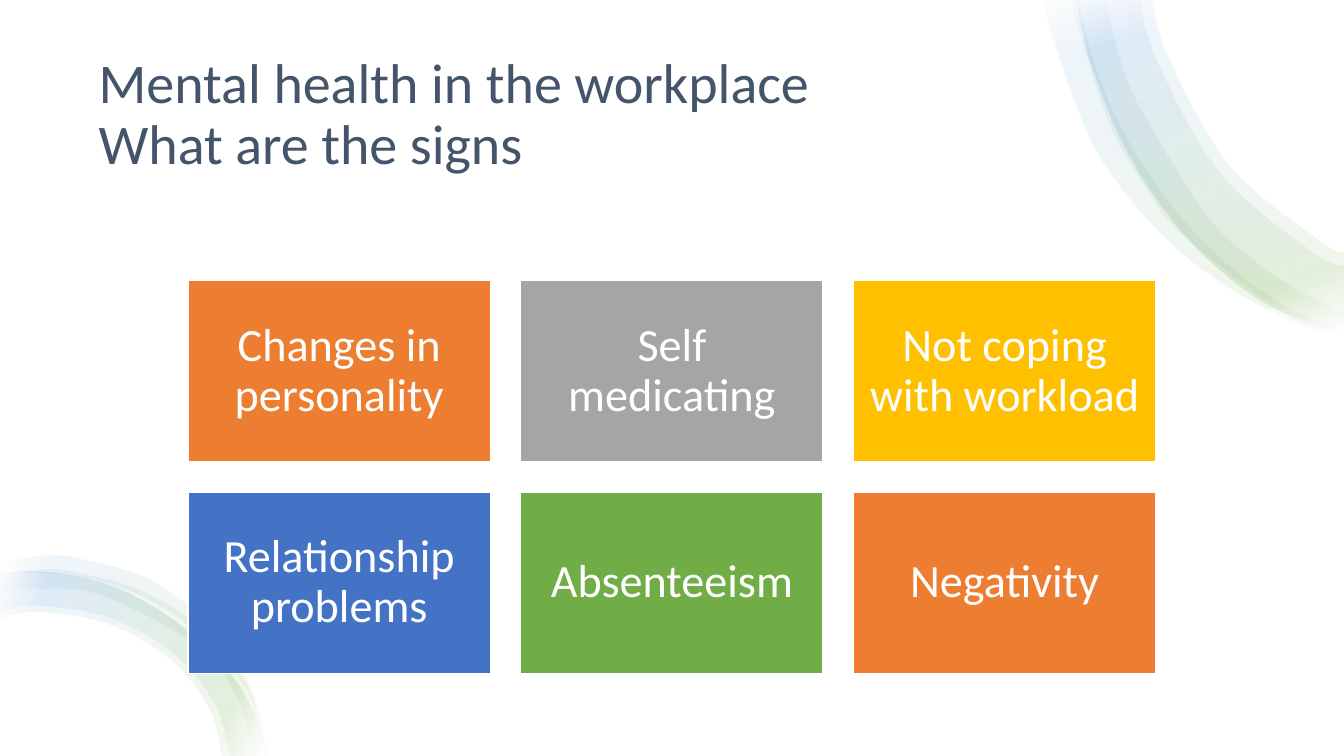
from dataclasses import dataclass

from lxml import etree
from pptx import Presentation
from pptx.dml.color import RGBColor
from pptx.enum.shapes import MSO_SHAPE
from pptx.enum.text import MSO_ANCHOR, PP_ALIGN
from pptx.oxml.ns import qn
from pptx.util import Inches, Pt

RECT = MSO_SHAPE.RECTANGLE
MIDDLE = MSO_ANCHOR.MIDDLE
CENTER, LEFT = PP_ALIGN.CENTER, PP_ALIGN.LEFT

W, H = 13.33, 7.5
UNIT = 0.3  # grid step in inches
TILE_COLS, TILE_ROWS, GAP = 10, 6, 1  # in grid steps
PER_ROW = 3


@dataclass(frozen=True)
class Theme:
    font: str = "Calibri"
    title_size: int = 40
    tile_size: int = 33
    title: str = "44546A"
    white: str = "FFFFFF"
    orange: str = "ED7D31"
    gray: str = "A5A5A5"
    gold: str = "FFC000"
    blue: str = "4472C4"
    green: str = "70AD47"
    sky: str = "5B9BD5"
    band_opacity: int = 10


THEME = Theme()

TILES = [
    ("Changes in personality", THEME.orange),
    ("Self medicating", THEME.gray),
    ("Not coping with workload", THEME.gold),
    ("Relationship problems", THEME.blue),
    ("Absenteeism", THEME.green),
    ("Negativity", THEME.orange),
]

# Edges of the curved bands, in inches
TOP_OUTER = [(10.67, -0.09), (10.82, 0.62), (11.2, 1.54), (11.79, 2.38),
             (12.48, 2.97), (13.09, 3.24), (13.33, 3.32)]
TOP_BANDS = [
    ([(10.36, -0.09), (10.41, 0.26), (10.78, 1.31), (11.16, 1.92),
      (11.65, 2.45), (12.21, 2.87), (12.82, 3.19), (13.33, 3.35)],
     [(10.68, -0.09), (10.82, 0.52), (11.06, 1.15), (11.4, 1.73),
      (11.81, 2.27), (12.3, 2.73), (12.86, 3.1), (13.33, 3.28)]),
    (TOP_OUTER,
     [(11.41, -0.09), (11.58, 0.55), (12.19, 1.64), (13.07, 2.38), (13.33, 2.51)]),
    ([(10.63, -0.09), (10.68, 0.2), (10.99, 1.19), (11.32, 1.79),
      (11.73, 2.33), (12.79, 3.14), (13.33, 3.33)],
     [(10.96, -0.09), (11.07, 0.44), (11.29, 1.04), (11.95, 2.11),
      (12.39, 2.55), (12.9, 2.9), (13.33, 3.08)]),
    (TOP_OUTER,
     [(11.29, -0.09), (11.47, 0.59), (12.1, 1.72), (13.01, 2.5), (13.33, 2.64)]),
]
BOTTOM_OUTER = [(0, 5.72), (0.4, 5.67), (1.13, 5.82), (1.84, 6.24),
                (2.36, 6.79), (2.62, 7.35), (2.63, 7.5)]
BOTTOM_BANDS = [
    (BOTTOM_OUTER,
     [(0, 6.13), (0.4, 6.07), (1.07, 6.19), (1.66, 6.52), (2.06, 7), (2.2, 7.5)]),
    (BOTTOM_OUTER,
     [(0, 6.06), (0.4, 6.01), (1.09, 6.13), (1.7, 6.47), (2.12, 6.97), (2.28, 7.5)]),
    ([(0, 5.71), (0.31, 5.66), (0.69, 5.67), (1.42, 5.87), (2.03, 6.27),
      (2.47, 6.85), (2.63, 7.5)],
     [(0, 5.88), (0.33, 5.84), (1.01, 5.91), (1.92, 6.39), (2.34, 6.91), (2.51, 7.5)]),
    ([(0, 5.59), (0.31, 5.53), (0.71, 5.53), (1.48, 5.75), (2.1, 6.23),
      (2.5, 6.87), (2.64, 7.5)],
     [(0, 5.72), (0.32, 5.68), (1.05, 5.78), (1.71, 6.09), (2.25, 6.58),
      (2.51, 7.01), (2.62, 7.5)]),
]


def rgb(color):
    return RGBColor.from_string(color)


def bend_edges(shape, corner):
    """Turn the lines of both edges into curves; the line to corner stays."""
    outline = shape.element.spPr.find(".//" + qn("a:pathLst"))[0]
    pts = [(int(pt.get("x")), int(pt.get("y"))) for pt in outline.iter(qn("a:pt"))]
    lines = outline.findall(qn("a:lnTo"))
    for first, last in ((0, corner - 1), (corner, len(pts) - 1)):
        for i in range(first, last):
            before, a = pts[max(i - 1, first)], pts[i]
            b, after = pts[i + 1], pts[min(i + 2, last)]
            leave = [q + (r - p) / 6 for p, q, r in zip(before, a, b)]
            arrive = [q - (r - p) / 6 for p, q, r in zip(a, b, after)]
            curve = etree.Element(qn("a:cubicBezTo"))
            for x, y in (leave, arrive, b):
                etree.SubElement(curve, qn("a:pt"), x=str(round(x)), y=str(round(y)))
            outline.replace(lines[i], curve)


def fill_gradient(shape, angle):
    """See-through white, green, blue, white; angle is counter-clockwise."""
    shape.fill.gradient()
    shape.fill.gradient_angle = angle
    stops = shape.element.spPr.find(".//" + qn("a:gsLst"))
    for stop in list(stops):
        stops.remove(stop)
    for share, color in ((2, THEME.white), (16, THEME.green),
                         (85, THEME.sky), (100, THEME.white)):
        stop = etree.SubElement(stops, qn("a:gs"), pos=str(share * 1000))
        clr = etree.SubElement(stop, qn("a:srgbClr"), val=color)
        etree.SubElement(clr, qn("a:alpha"), val=str(THEME.band_opacity * 1000))


def add_band(s, outer, inner, angle):
    start, *rest = [(Inches(x), Inches(y)) for x, y in outer + inner[::-1]]
    builder = s.shapes.build_freeform(*start)
    builder.add_line_segments(rest, close=True)
    band = builder.convert_to_shape()
    bend_edges(band, len(outer))
    band.shadow.inherit = False
    band.line.fill.background()
    fill_gradient(band, angle)


def add_rect(s, left, top, width, height, color):
    rect = s.shapes.add_shape(RECT, Inches(left), Inches(top),
                              Inches(width), Inches(height))
    rect.shadow.inherit = False
    rect.fill.solid()
    rect.fill.fore_color.rgb = rgb(color)
    rect.line.fill.background()
    return rect


def set_text(shape, text, size, color, align):
    tf = shape.text_frame
    tf.word_wrap = True
    tf.vertical_anchor = MIDDLE
    p = tf.paragraphs[0]
    p.text = text
    p.alignment = align
    p.line_spacing = 0.9
    p.font.name = THEME.font
    p.font.size = Pt(size)
    p.font.color.rgb = rgb(color)
    return tf


def add_title(s, text):
    box = s.shapes.add_textbox(Inches(W * 0.066), Inches(H / 15),
                               Inches(W * 0.868), Inches(1.3))
    set_text(box, text, THEME.title_size, THEME.title, LEFT)


def add_tile(s, index, text, color):
    row, col = divmod(index, PER_ROW)
    left = (W - UNIT * (PER_ROW * (TILE_COLS + GAP) - GAP)) / 2
    top = H * 0.371
    tile = add_rect(s, left + col * (TILE_COLS + GAP) * UNIT,
                    top + row * (TILE_ROWS + GAP) * UNIT,
                    TILE_COLS * UNIT, TILE_ROWS * UNIT, color)
    tile.line.color.rgb = rgb(THEME.white)
    tile.line.width = Pt(1)
    tf = set_text(tile, text, THEME.tile_size, THEME.white, CENTER)
    tf.margin_left = tf.margin_right = Inches(0.14)
    tf.margin_top = tf.margin_bottom = Inches(0.14)


def main():
    prs = Presentation()
    prs.slide_width, prs.slide_height = Inches(W), Inches(H)
    s = prs.slides.add_slide(prs.slide_layouts[6])

    # White ground and title
    add_rect(s, 0, 0, W, H, THEME.white)
    add_title(s, "Mental health in the workplace\vWhat are the signs")

    # Curved bands in two corners
    for bands, angle in ((TOP_BANDS, 110), (BOTTOM_BANDS, 160)):
        for outer, inner in bands:
            add_band(s, outer, inner, angle)

    # Grid of signs
    for index, (text, color) in enumerate(TILES):
        add_tile(s, index, text, color)

    prs.save("out.pptx")


if __name__ == "__main__":
    main()
